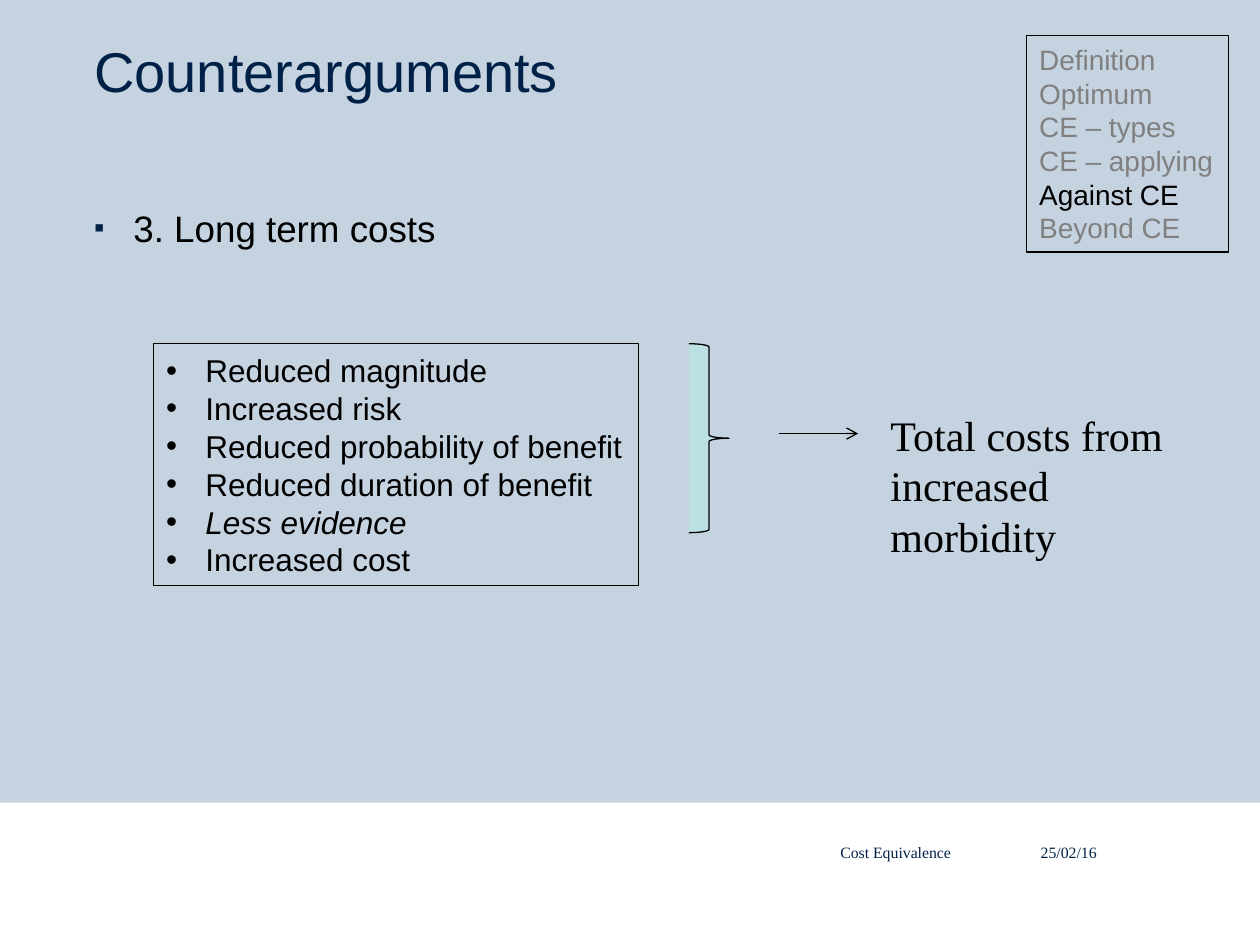
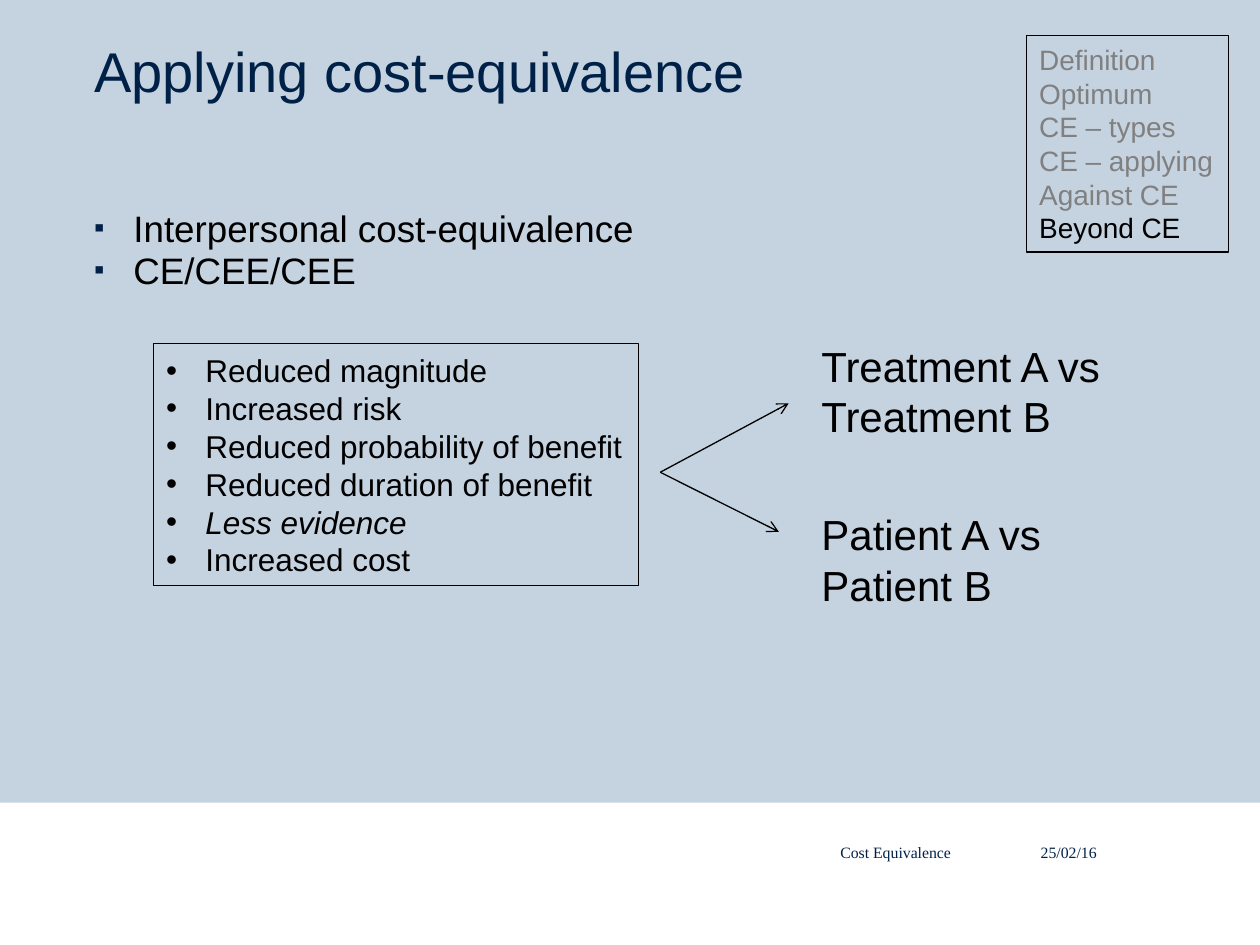
from lxml.etree import SubElement
from pptx import Presentation
from pptx.dml.color import RGBColor
from pptx.enum.shapes import MSO_CONNECTOR, MSO_SHAPE
from pptx.enum.text import MSO_AUTO_SIZE, PP_ALIGN
from pptx.oxml.ns import qn
from pptx.util import Cm, Pt

# Shared look
NAVY, BLACK, GREY, WHITE = "002147", "000000", "808080", "FFFFFF"
BACKGROUND, BRACE_FILL = "C5D2E0", "BBE0E3"
SANS, SERIF = "Arial", "Times New Roman"
BULLET_INDENT = 0.79

# Content; places are left, top, width, height in cm
SECTIONS = ["Definition", "Optimum", "CE – types", "CE – applying",
            "Against CE", "Beyond CE"]
COSTS = ["Reduced magnitude", "Increased risk",
         "Reduced probability of benefit", "Reduced duration of benefit",
         "Less evidence", "Increased cost"]
UNCERTAIN_COST = "Less evidence"
FOOTERS = [("25/02/16", (20.98, 16.94, 3.78, 1.27)),
           ("Cost Equivalence", (16.94, 16.94, 3.61, 1.5))]
SLIDES = [
    dict(title="Counterarguments",
         section="Against CE",
         points=["3. Long term costs"],
         brace=(13.89, 6.93, 0.81, 3.81),
         arrows=[((15.7, 8.74), (17.3, 8.74))],
         outcomes=[("Total costs from increased morbidity", SERIF,
                    (17.7, 8.13, 7.01, 3.33))]),
    dict(title="Applying cost-equivalence",
         section="Beyond CE",
         points=["Interpersonal cost-equivalence", "CE/CEE/CEE"],
         brace=None,
         arrows=[((13.31, 9.52), (15.9, 8.13)),
                 ((13.31, 9.52), (15.7, 10.72))],
         outcomes=[("Treatment A vs Treatment B", SANS,
                    (16.31, 6.73, 9.09, 2.31)),
                   ("Patient A vs Patient B", SANS,
                    (16.31, 10.13, 6.4, 2.31))]),
]


def rgb(hex_color):
    return RGBColor.from_string(hex_color)


def add_bullet(paragraph, mark, color=None, percent=None):
    props = paragraph._p.get_or_add_pPr()
    props.set("marL", str(Cm(BULLET_INDENT)))
    props.set("indent", str(-Cm(BULLET_INDENT)))
    if color:
        SubElement(SubElement(props, qn("a:buClr")), qn("a:srgbClr"), val=color)
    if percent:
        SubElement(props, qn("a:buSzPct"), val=str(percent * 1000))
    SubElement(props, qn("a:buFont"), typeface=SANS)
    SubElement(props, qn("a:buChar"), char=mark)


def write(frame, lines, size, color=BLACK, font=SANS, spacing=None,
          bullet=None, colors=None, italic=None):
    """Fill a frame; colors maps single lines to their own colour."""
    for i, line in enumerate(lines):
        paragraph = frame.add_paragraph() if i else frame.paragraphs[0]
        paragraph.alignment = PP_ALIGN.LEFT
        if bullet:
            add_bullet(paragraph, *bullet)
        if spacing:
            paragraph.line_spacing = Pt(spacing)
        run = paragraph.add_run()
        run.text = line
        run.font.name, run.font.size = font, Pt(size)
        run.font.color.rgb = rgb((colors or {}).get(line, color))
        if line == italic:
            run.font.italic = True


def add_text(slide, place, lines, size, inset=True, **style):
    frame = slide.shapes.add_textbox(*map(Cm, place)).text_frame
    frame.word_wrap = True
    if not inset:
        frame.margin_left = frame.margin_right = 0
        frame.margin_top = frame.margin_bottom = 0
    write(frame, lines, size, **style)


def add_form(slide, kind, place, fill=None, line=BLACK):
    form = slide.shapes.add_shape(kind, *map(Cm, place))
    form.shadow.inherit = False
    if fill:
        form.fill.solid()
        form.fill.fore_color.rgb = rgb(fill)
    else:
        form.fill.background()
    if line:
        form.line.color.rgb = rgb(line)
        form.line.width = Pt(0.75)
    else:
        form.line.fill.background()
    return form


def add_framed_list(slide, place, lines, size, **style):
    frame = add_form(slide, MSO_SHAPE.RECTANGLE, place).text_frame
    frame.word_wrap = False
    frame.auto_size = MSO_AUTO_SIZE.SHAPE_TO_FIT_TEXT
    write(frame, lines, size, **style)


def add_arrow(slide, start, end):
    arrow = slide.shapes.add_connector(
        MSO_CONNECTOR.STRAIGHT, *map(Cm, start + end))
    arrow.line.color.rgb = rgb(BLACK)
    arrow.line.width = Pt(0.75)
    SubElement(arrow.line._get_or_add_ln(), qn("a:tailEnd"), type="arrow")
    SubElement(arrow._element.spPr, qn("a:effectLst"))


def build_slide(deck, content):
    slide = deck.slides.add_slide(deck.slide_layouts[6])
    # Footer band, title and main points
    add_form(slide, MSO_SHAPE.RECTANGLE, (0, 16.18, 25.4, 2.87), WHITE, None)
    add_text(slide, (1.9, 0.79, 21.59, 2.59), [content["title"]], 32,
             inset=False, color=NAVY, spacing=37)
    add_text(slide, (1.9, 4.19, 21.59, 11.43), content["points"], 21,
             inset=False, spacing=24, bullet=("▪", NAVY, 80))
    # Costs and what they lead to
    add_framed_list(slide, (3.1, 6.93, 9.78, 4.88), COSTS, 18,
                    bullet=("•",), italic=UNCERTAIN_COST)
    if content["brace"]:
        add_form(slide, MSO_SHAPE.RIGHT_BRACE, content["brace"], BRACE_FILL)
    for start, end in content["arrows"]:
        add_arrow(slide, start, end)
    for outcome, font, place in content["outcomes"]:
        add_text(slide, place, [outcome], 24, font=font)
    # Footers and section tracker
    for footer, place in FOOTERS:
        add_text(slide, place, [footer], 9, inset=False, color=NAVY,
                 font=SERIF, spacing=12)
    add_framed_list(slide, (20.7, 0.71, 4.06, 4.37), SECTIONS, 16,
                    color=GREY, colors={content["section"]: BLACK})


def main():
    deck = Presentation()
    deck.slide_width, deck.slide_height = Cm(25.4), Cm(19.05)
    backdrop = deck.slide_master.background.fill
    backdrop.solid()
    backdrop.fore_color.rgb = rgb(BACKGROUND)
    for content in SLIDES:
        build_slide(deck, content)
    deck.save("out.pptx")


if __name__ == "__main__":
    main()
